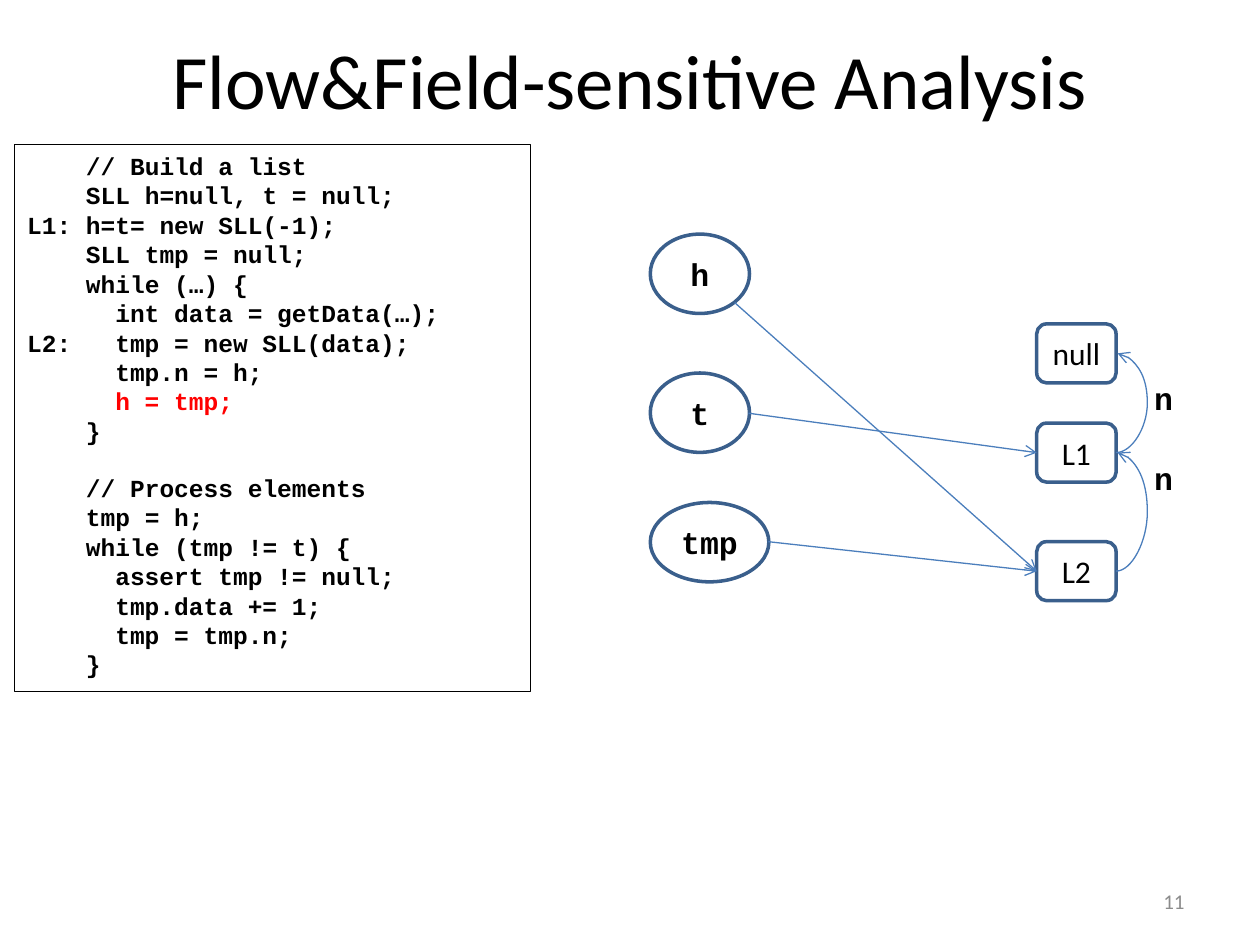
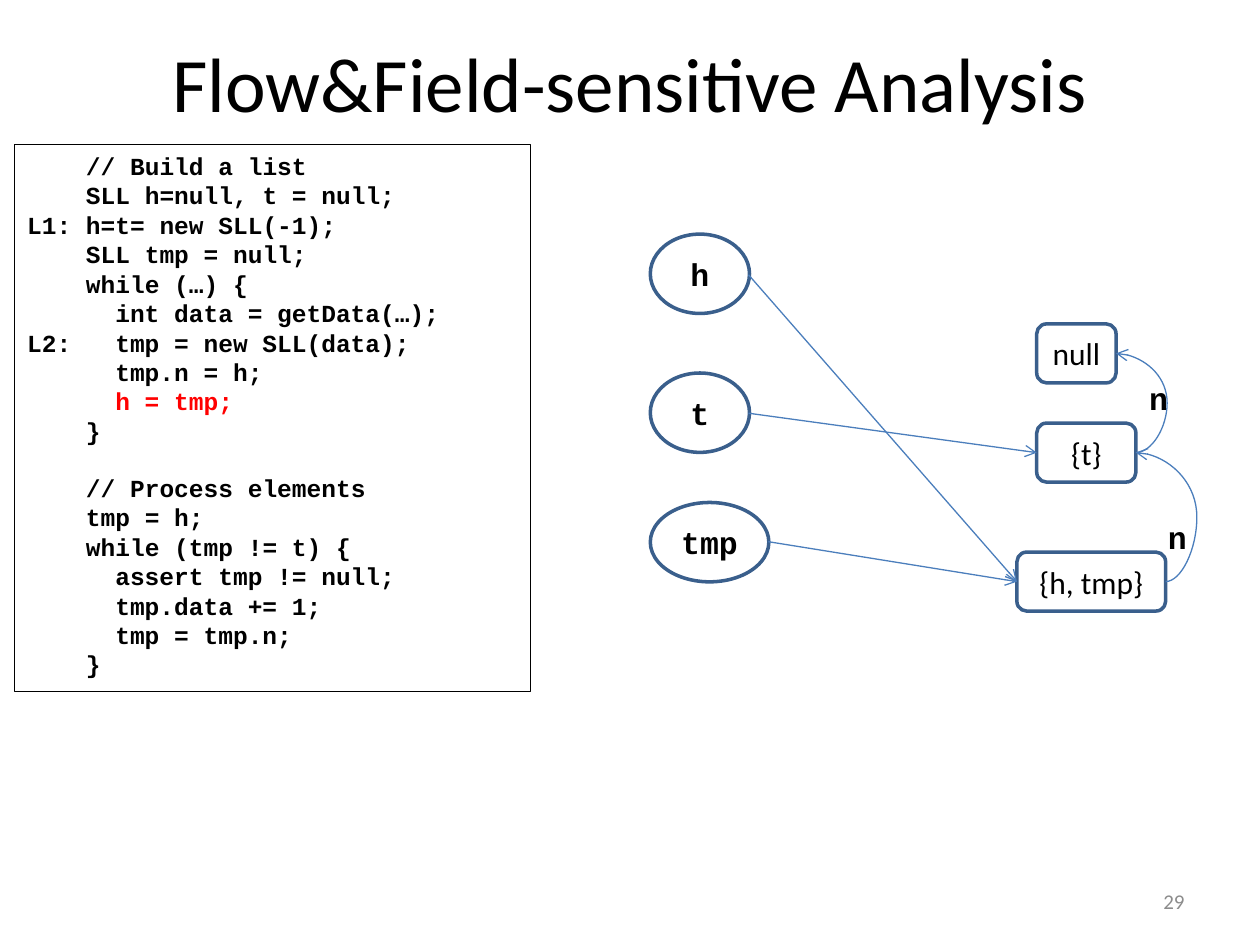
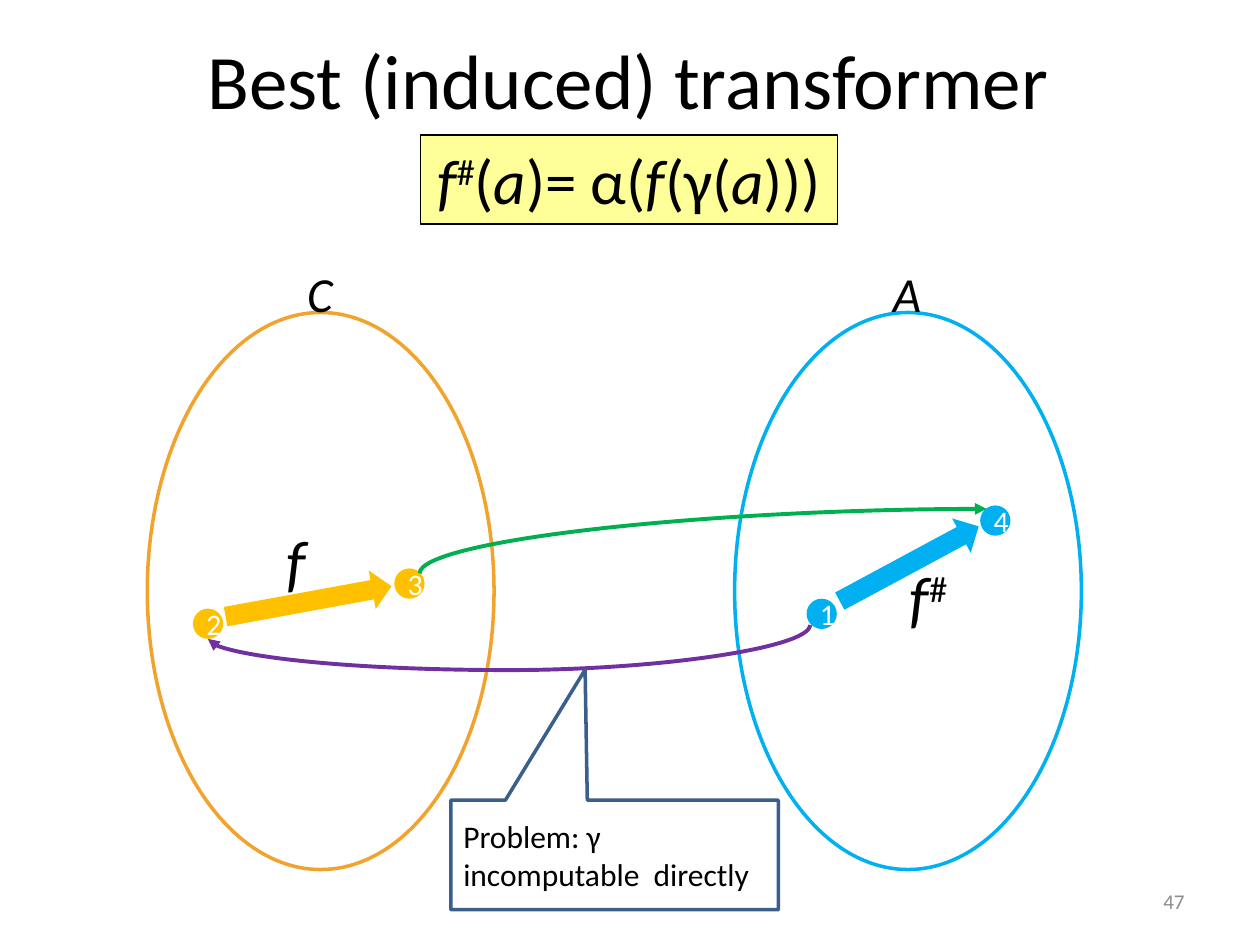
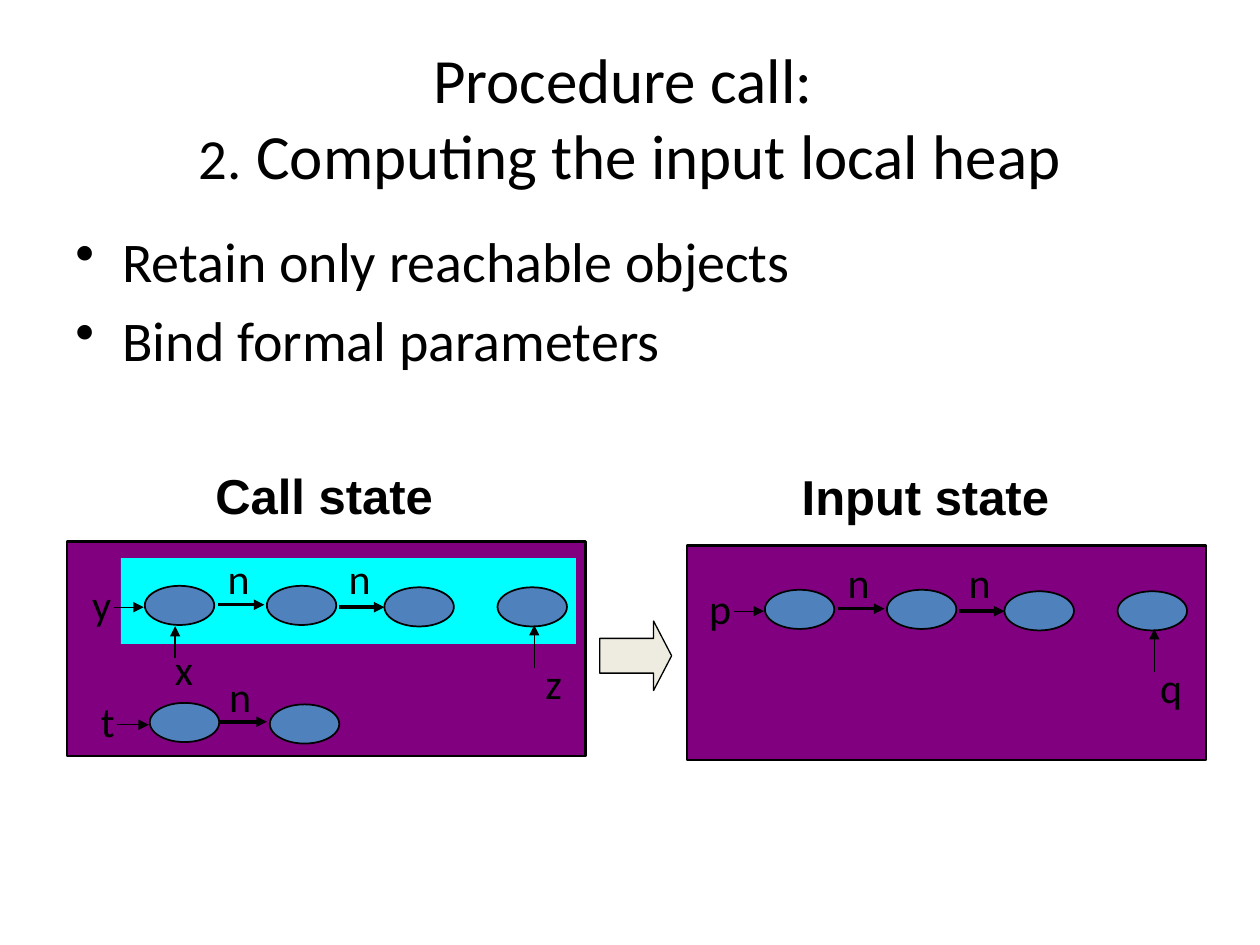
from lxml.etree import SubElement
from pptx import Presentation
from pptx.dml.color import RGBColor
from pptx.enum.shapes import MSO_CONNECTOR, MSO_SHAPE
from pptx.enum.text import MSO_ANCHOR, MSO_AUTO_SIZE, PP_ALIGN
from pptx.oxml.ns import qn
from pptx.util import Cm, Pt

BLACK, WHITE, GREY, RED = "000000", "FFFFFF", "8C8C8C", "FF0000"
EDGE, LINK = "3A5F8C", "4B7EBC"
GOLD, SKY, GREEN, VIOLET = "FFC000", "00B0F0", "00B050", "7030A0"
PURPLE, CYAN, STEEL = "800080", "00FFFF", "4F81BD"
SANS, MONO = "Calibri", "Courier New"
LEFT, MID, RIGHT = PP_ALIGN.LEFT, PP_ALIGN.CENTER, PP_ALIGN.RIGHT
CHAR = 0.296

CODE = [
    ("", 4, "// Build a list"),
    ("", 4, "SLL h=null, t = null;"),
    ("L1:", 4, "h=t= new SLL(-1);"),
    ("", 4, "SLL tmp = null;"),
    ("", 4, "while (…) {"),
    ("", 6, "int data = getData(…);"),
    ("L2:", 6, "tmp = new SLL(data);"),
    ("", 6, "tmp.n = h;"),
    ("", 6, "h = tmp;"),
    ("", 4, "}"),
    ("", 4, "// Process elements"),
    ("", 4, "tmp = h;"),
    ("", 4, "while (tmp != t) {"),
    ("", 6, "assert tmp != null;"),
    ("", 6, "tmp.data += 1;"),
    ("", 6, "tmp = tmp.n;"),
    ("", 4, "}"),
]


def rgb(code):
    return RGBColor.from_string(code)


def style(p, size, face=SANS, color=BLACK, bold=False, align=MID):
    p.alignment = align
    p.font.size = Pt(size)
    p.font.name = face
    p.font.bold = bold
    p.font.color.rgb = rgb(color)


def indent(p, left, first):
    props = p._p.get_or_add_pPr()
    props.set("marL", str(Cm(left)))
    props.set("indent", str(Cm(first)))
    return props


def text(slide, box, words, size, anchor=MSO_ANCHOR.TOP, wrap=True, **look):
    item = slide.shapes.add_textbox(*map(Cm, box))
    frame = item.text_frame
    frame.word_wrap = wrap
    frame.vertical_anchor = anchor
    frame.text = words
    style(frame.paragraphs[0], size, **look)
    return item


def shape(slide, kind, box, fill=None, line=None, width=2):
    item = slide.shapes.add_shape(kind, *map(Cm, box))
    item.shadow.inherit = False
    if fill:
        item.fill.solid()
        item.fill.fore_color.rgb = rgb(fill)
    else:
        item.fill.background()
    if line:
        item.line.color.rgb = rgb(line)
        item.line.width = Pt(width)
    else:
        item.line.fill.background()
    return item


def label(item, words, size=18, **look):
    item.text_frame.text = words
    style(item.text_frame.paragraphs[0], size, **look)
    return item


def mix(item, parts):
    frame = item.text_frame
    frame.word_wrap = False
    frame.auto_size = MSO_AUTO_SIZE.SHAPE_TO_FIT_TEXT
    frame.vertical_anchor = MSO_ANCHOR.TOP
    p = frame.paragraphs[0]
    style(p, 36)
    for words, mark in parts:
        run = p.add_run()
        run.text = words
        run.font.italic = mark == "i"
        if mark == "^":
            run._r.get_or_add_rPr().set("baseline", "30000")


def finish(wire, color, width, head):
    wire.line.color.rgb = rgb(color)
    wire.line.width = Pt(width)
    SubElement(wire.line._get_or_add_ln(), qn("a:tailEnd"), type=head)
    SubElement(wire._element.spPr, qn("a:effectLst"))
    return wire


def arrow(slide, start, end, color=BLACK, width=0.75, head="triangle"):
    ends = map(Cm, (*start, *end))
    wire = slide.shapes.add_connector(MSO_CONNECTOR.STRAIGHT, *ends)
    return finish(wire, color, width, head)


def point(slide, start, node):
    wire = arrow(slide, start, start, LINK, head="arrow")
    wire.end_connect(node, 1)


def curve(slide, ends, bend, color, width, head):
    wire = slide.shapes.add_connector(MSO_CONNECTOR.CURVE, *map(int, ends))
    finish(wire, color, width, head)
    geom = wire._element.spPr.find(qn("a:prstGeom"))
    if bend is None:
        geom.set("prst", "curvedConnector2")
    else:
        guides = geom.find(qn("a:avLst"))
        if guides is None:
            guides = SubElement(geom, qn("a:avLst"))
        SubElement(guides, qn("a:gd"), name="adj1", fmla=f"val {round(bend * 100000)}")
    return wire


def arc(slide, lower, upper):
    x, end = lower.left + lower.width, upper.left + upper.width
    if end == x:
        end += Cm(0.03)
    ends = (x, lower.top + lower.height / 2, end, upper.top + upper.height / 2)
    curve(slide, ends, Cm(0.63) / (end - x), LINK, 0.75, "arrow")


def swoop(slide, start, end, color, drop=None):
    (x, y), (far, low) = start, end
    wide, tall = far - x, low - y
    midx, midy = (x + far) / 2, (y + low) / 2
    ends = (midx - tall / 2, midy + wide / 2, midx + tall / 2, midy - wide / 2)
    bend = None if drop is None else drop / tall
    wire = curve(slide, map(Cm, ends), bend, color, 2.25, "triangle")
    xfrm = wire._element.spPr.find(qn("a:xfrm"))
    wire_flip = (wide > 0, tall < 0)
    for name, on in zip(("flipV", "flipH"), wire_flip):
        if on:
            xfrm.set(name, "1")
    xfrm.set("rot", "5400000")


def title(slide, words="", top=0, left=1.27):
    return text(slide, (left, top, 22.86, 3.18), words, 44, MSO_ANCHOR.MIDDLE)


def number(slide, value):
    box = (18.21, 17.65, 5.92, 1.02)
    text(slide, box, value, 12, MSO_ANCHOR.MIDDLE, color=GREY, align=RIGHT)


def listing(slide):
    box = (0.3, 2.92, 10.39, 11.02)
    frame = shape(slide, MSO_SHAPE.RECTANGLE, box, WHITE, BLACK, 0.75).text_frame
    frame.vertical_anchor = MSO_ANCHOR.TOP
    for i, (tag, depth, words) in enumerate(CODE):
        p = frame.add_paragraph() if i else frame.paragraphs[0]
        p.text = f"{tag}\t{words}" if tag else words
        color = RED if words == "h = tmp;" else BLACK
        style(p, 14, MONO, color, True, LEFT)
        indent(p, depth * CHAR, -depth * CHAR if tag else 0)
        if words == "// Process elements":
            p.space_before = Pt(15.86)


def graph(slide, top, page, starts, nodes, marks):
    title(slide, "Flow&Field-sensitive Analysis", top)
    number(slide, page)
    listing(slide)
    for name, y, wide in (("h", 4.72, 2), ("t", 7.52, 2), ("tmp", 10.13, 2.39)):
        oval = shape(slide, MSO_SHAPE.OVAL, (13.11, y, wide, 1.6), line=EDGE)
        label(oval, name, face=MONO, bold=True)
    cells = []
    for name, x, y, wide in nodes:
        cell = shape(slide, MSO_SHAPE.ROUNDED_RECTANGLE, (x, y, wide, 1.19), line=EDGE)
        cell.text_frame.word_wrap = False
        cells.append(label(cell, name))
    null, one, two = cells
    for start, node in zip(starts, (two, one, two)):
        point(slide, start, node)
    arc(slide, one, null)
    arc(slide, two, one)
    for x, y in marks:
        text(slide, (x, y, 0.89, 1.02), "n", 18, wrap=False, face=MONO, bold=True)


def best(slide):
    title(slide, "Best (induced) transformer", left=1.24)
    number(slide, "47")
    for name, x, y, color in (("C", 2.97, 5.94, "F2A32E"), ("A", 14.81, 17.75, SKY)):
        shape(slide, MSO_SHAPE.OVAL, (x, 6.3, 6.99, 11.23), line=color)
        box = text(slide, (y, 5.18, 1.06, 1.45), name, 28, wrap=False, align=LEFT)
        box.text_frame.paragraphs[0].font.italic = True
    dots = (("2", 3.89, 12.27, GOLD), ("3", 7.95, 11.46, GOLD),
            ("1", 16.26, 12.07, SKY), ("4", 19.76, 10.19, SKY))
    for name, x, y, color in dots:
        dot = shape(slide, MSO_SHAPE.OVAL, (x, y, 0.61, 0.61), color)
        label(dot, name, 17, color=WHITE)
    steps = (((4.52, 11.73, 3.4, 0.79), 349.6, GOLD),
             ((16.74, 10.97, 3.18, 0.79), 331.7, SKY))
    for box, turn, color in steps:
        shape(slide, MSO_SHAPE.RIGHT_ARROW, box, color).rotation = turn
    sharp = [("f", "i"), ("#", "^")]
    for box, parts in (((5.51, 10.41, 0.91, 1.8), sharp[:1]),
                       ((18.06, 11.13, 1.32, 1.8), sharp)):
        mix(slide.shapes.add_textbox(*map(Cm, box)), parts)
    swoop(slide, (16.33, 12.6), (4.19, 12.88), VIOLET, 0.91)
    swoop(slide, (8.46, 11.56), (19.89, 10.26), GREEN)
    box = (8.48, 2.72, 8.41, 1.8)
    rule = shape(slide, MSO_SHAPE.RECTANGLE, box, "FFFF99", BLACK, 0.75)
    mix(rule, sharp + [("(", ""), ("a", "i"), (")= α(", ""), ("f", "i"),
                       ("(γ(", ""), ("a", "i"), (")))", "")])
    box = (9.09, 16.13, 6.6, 2.21)
    note = shape(slide, MSO_SHAPE.RECTANGULAR_CALLOUT, box, line=EDGE)
    note.adjustments[0], note.adjustments[1] = -0.09, -1.69
    label(note, "Problem: γ incomputable  directly", align=LEFT)


def cell(slide, x, y):
    shape(slide, MSO_SHAPE.OVAL, (x, y, 1.4, 0.79), STEEL, BLACK, 1)


def name(slide, words, x, y, wide=1.04, align=RIGHT):
    text(slide, (x, y, wide, 1.27), words, 24, align=align)


def link(slide, x, y, end, top):
    arrow(slide, (x, y), (end, y), width=2)
    name(slide, "n", x - 0.2, top, 1.24, MID)


def heap(slide, dx, dy, first, last):
    for x, y in ((2.92, 11.81), (5.38, 11.81), (7.75, 11.84), (10.03, 11.84)):
        cell(slide, x + dx, y + dy)
    link(slide, 4.39 + dx, 12.19 + dy, 5.33 + dx, 11.02 + dy)
    link(slide, 6.83 + dx, 12.24 + dy, 7.75 + dx, 11.02 + dy)
    name(slide, first, 1.45 + dx, 11.53 + dy)
    arrow(slide, (2.29 + dx, 12.24 + dy), (2.9 + dx, 12.24 + dy))
    name(slide, last, 10.39 + dx, 13.13 + dy, 1.19)
    arrow(slide, (10.77 + dx, 13.46 + dy), (10.77 + dx, 12.6 + dy))


def state(slide, words, x, y, left, top):
    box = text(slide, (x, y, 7.54, 1.45), words, 28, face="Arial", bold=True)
    box.text_frame.margin_right = Cm(1.52)
    shape(slide, MSO_SHAPE.RECTANGLE, (left, top, 10.46, 4.32), PURPLE, BLACK, 1.5)


def call(slide):
    p = title(slide, top=0.76).text_frame.paragraphs[0]
    p.font.size = Pt(36)
    p.add_run().text = "Procedure call: "
    p.add_line_break()
    for words, size in (("2.", 32.4), (" Computing the input local heap", 36)):
        run = p.add_run()
        run.text = words
        run.font.size = Pt(size)
    points = ("Retain only reachable objects", "Bind formal parameters")
    frame = text(slide, (1.27, 4.45, 22.86, 12.57), "\n".join(points), 32).text_frame
    for p in frame.paragraphs:
        style(p, 32, align=LEFT)
        p.space_before = Pt(6.4)
        props = indent(p, 0.95, -0.95)
        bullet = props.makeelement(qn("a:buChar"), {"char": "•"})
        props.find(qn("a:defRPr")).addprevious(bullet)
    box = (12.09, 12.52, 1.45, 1.4)
    block = shape(slide, MSO_SHAPE.RIGHT_ARROW, box, "EEECE1", BLACK, 0.75)
    block.adjustments[1] = 0.26
    state(slide, "Call state", 3.4, 9.25, 1.35, 10.92)
    shape(slide, MSO_SHAPE.RECTANGLE, (2.44, 11.25, 9.17, 1.73), CYAN)
    heap(slide, 0, 0, "y", "z")
    name(slide, "x", 3.1, 12.85)
    arrow(slide, (3.53, 13.26), (3.53, 12.62))
    name(slide, "t", 1.52, 13.89)
    arrow(slide, (2.36, 14.61), (3, 14.61))
    cell(slide, 3.02, 14.17)
    cell(slide, 5.44, 14.2)
    link(slide, 4.42, 14.55, 5.38, 13.39)
    state(slide, "Input state", 15.52, 9.27, 13.85, 11)
    heap(slide, 12.5, 0.08, "p", "q")


def main():
    deck = Presentation()
    deck.slide_width, deck.slide_height = Cm(25.4), Cm(19.05)
    one, two, three, four = [
        deck.slides.add_slide(deck.slide_layouts[6]) for _ in range(4)
    ]
    null = ("null", 20.9, 6.53, 1.6)
    tail = [(15.09, 8.33), (15.49, 10.92)]
    graph(one, 0, "11", [(14.81, 6.1)] + tail,
          [null, ("L1", 20.9, 8.53, 1.6), ("L2", 20.9, 10.92, 1.6)],
          [(23.01, 7.52), (23.01, 9.12)])
    graph(two, 0.05, "29", [(15.09, 5.54)] + tail,
          [null, ("{t}", 20.9, 8.53, 2), ("{h, tmp}", 20.5, 11.13, 3, )],
          [(22.91, 7.52), (23.29, 10.31)])
    best(three)
    call(four)
    deck.save("out.pptx")


if __name__ == "__main__":
    main()
